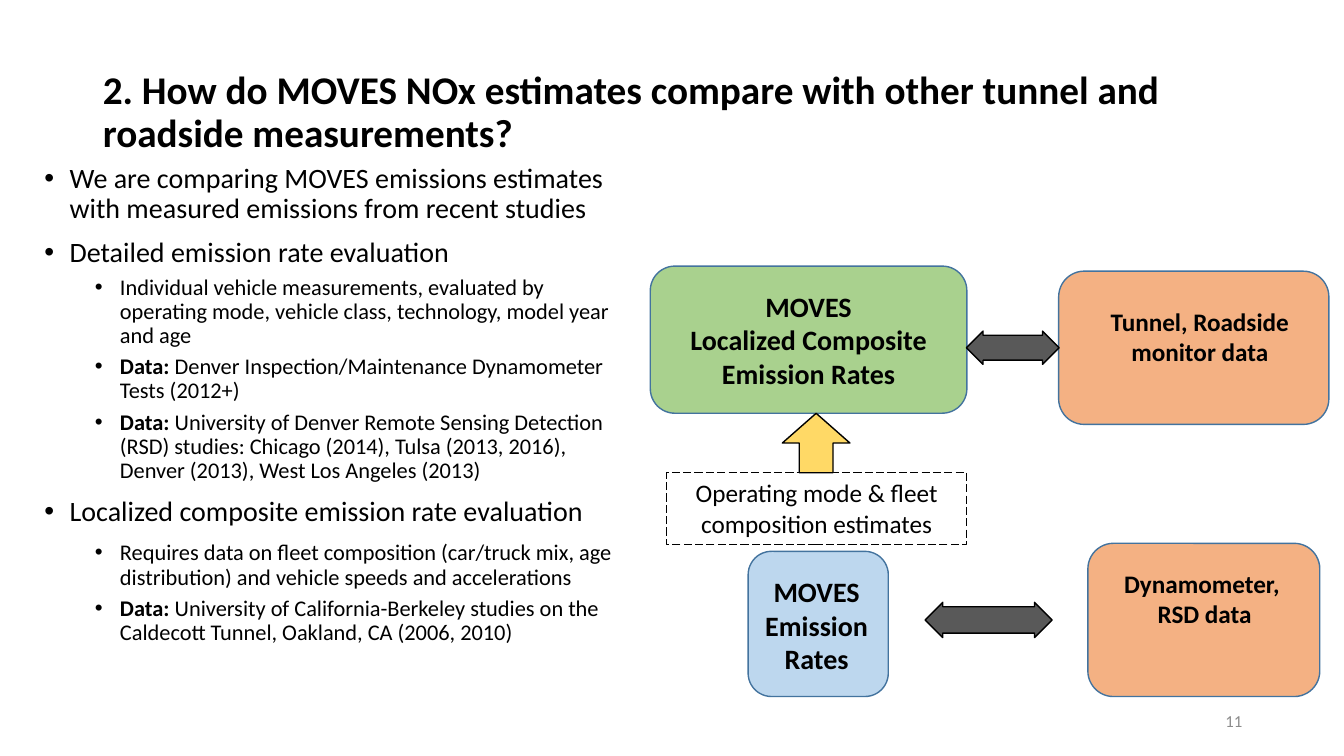
from dataclasses import dataclass

from lxml import etree
from pptx import Presentation
from pptx import util as u
from pptx.dml.color import RGBColor
from pptx.enum import dml, shapes, text
from pptx.oxml import ns

# Content: body paragraphs are (level, space before, [(words, bold), ...])
TITLE = "2. How do MOVES NOx estimates compare with other tunnel and roadside measurements?"
BODY = [
    (0, 10, [("We are comparing MOVES emissions estimates with measured emissions "
              "from recent studies", False)]),
    (0, 10, [("Detailed emission rate evaluation", False)]),
    (1, 5, [("Individual vehicle measurements, evaluated by operating mode, vehicle class, "
             "technology, model year and age", False)]),
    (1, 5, [("Data: ", True),
            ("Denver Inspection/Maintenance Dynamometer Tests (2012+)", False)]),
    (1, 5, [("Data:", True),
            (" University of Denver Remote Sensing Detection (RSD) studies: Chicago (2014), "
             "Tulsa (2013, 2016), Denver (2013), West Los Angeles (2013)", False)]),
    (0, 10, [("Localized composite emission rate evaluation", False)]),
    (2, 10, [("Requires data on fleet composition (car/truck mix, age distribution) and "
              "vehicle speeds and accelerations", False)]),
    (1, 5, [("Data: ", True),
            ("University of California-Berkeley studies on the Caldecott Tunnel, "
             "Oakland, CA (2006, 2010)", False)]),
]


@dataclass(frozen=True)
class Theme:
    font: str = "Calibri"
    ink: str = "000000"
    edge: str = "43739E"
    rates: str = "BDD7EE"
    composite: str = "A9D18E"
    data: str = "F4B183"
    compare: str = "595959"
    feed: str = "FFD966"
    muted: str = "8C8C8C"
    title: int = 28
    lead: int = 20
    label: int = 18
    detail: int = 16
    number: int = 12


T = Theme()
MSO = shapes.MSO_SHAPE
CENTER, RIGHT = text.PP_ALIGN.CENTER, text.PP_ALIGN.RIGHT

# Boxes in px: left, top, width, height
TITLE_BOX = (92, 40, 1150, 145)
BODY_BOX = (34, 158, 601, 546)
NUMBER_BOX = (942, 695, 300, 40)
ESTIMATES_BOX = (661, 469, 298, 71)
CARDS = [  # box, fill
    ((742, 547, 139, 144), T.rates),
    ((1079, 539, 230, 152), T.data),
    ((645, 264, 314, 146), T.composite),
    ((1050, 269, 268, 152), T.data),
]
LABELS = [  # box, lines, size
    ((728, 565, 164, 111), ["MOVES Emission Rates"], T.lead),
    ((1066, 559, 252, 71), ["Dynamometer,", " RSD data"], T.label),
    ((653, 282, 298, 111), ["MOVES", "Localized Composite Emission Rates"], T.lead),
    ((1079, 299, 222, 71), ["Tunnel, Roadside monitor data"], T.label),
]
ARROWS = [  # preset, box before turning, turn, adjustments, fill
    (MSO.UP_DOWN_ARROW, (963, 552, 35, 126), 90, (0.434, 0.75), T.compare),
    (MSO.UP_DOWN_ARROW, (988, 299, 33, 92), 90, (0.434, 0.75), T.compare),
    (MSO.UP_ARROW, (776, 410, 67, 59), 0, (), T.feed),
]

PX = u.Inches(1) // 100


def emu(box):
    return [v * PX for v in box]


def place(sp, box):
    for name, value in zip(("left", "top", "width", "height"), emu(box)):
        setattr(sp, name, value)


def add_run(p, words, size, bold=False, color=T.ink):
    r = p.add_run()
    r.text = words
    for name, value in dict(name=T.font, size=u.Pt(size), bold=bold).items():
        setattr(r.font, name, value)
    r.font.color.rgb = RGBColor.from_string(color)


def frame(sp, anchor=text.MSO_ANCHOR.TOP):
    tf = sp.text_frame
    settings = dict(word_wrap=True, auto_size=text.MSO_AUTO_SIZE.NONE, vertical_anchor=anchor)
    for name, value in settings.items():
        setattr(tf, name, value)
    return tf


def paragraph(tf, index, **settings):
    p = tf.add_paragraph() if index else tf.paragraphs[0]
    for name, value in settings.items():
        setattr(p, name, value)
    return p


def add_bullet(p, indent):
    pPr = p._p.get_or_add_pPr()
    pPr.set("marL", str(indent * PX))
    pPr.set("indent", str(-25 * PX))
    etree.SubElement(pPr, ns.qn("a:buFont"), typeface="Arial")
    etree.SubElement(pPr, ns.qn("a:buChar"), char="•")


def add_lines(sp, lines, size, bold=False):
    tf = frame(sp)
    for i, words in enumerate(lines):
        add_run(paragraph(tf, i, alignment=CENTER), words, size, bold)


def add_shape(s, preset, box, fill=None, line=T.edge, width=1):
    sp = s.shapes.add_shape(preset, *emu(box))
    sp.shadow.inherit = False
    if fill:
        sp.fill.solid()
        sp.fill.fore_color.rgb = RGBColor.from_string(fill)
    else:
        sp.fill.background()
    sp.line.color.rgb = RGBColor.from_string(line)
    sp.line.width = u.Pt(width)
    return sp


def main():
    prs = Presentation()
    prs.slide_width, prs.slide_height = u.Inches(13.33), u.Inches(7.5)
    s = prs.slides.add_slide(prs.slide_layouts[1])

    # Title
    title = s.shapes.title
    place(title, TITLE_BOX)
    tf = frame(title, text.MSO_ANCHOR.MIDDLE)
    p = paragraph(tf, 0, alignment=text.PP_ALIGN.LEFT, line_spacing=0.9)
    add_run(p, TITLE, T.title, True)

    # Bulleted list
    body = s.placeholders[1]
    place(body, BODY_BOX)
    tf = frame(body)
    for i, (level, before, runs) in enumerate(BODY):
        p = paragraph(tf, i, level=level, line_spacing=0.9, space_before=u.Pt(before))
        add_bullet(p, 75 if level else 25)
        for words, bold in runs:
            add_run(p, words, T.detail if level else T.lead, bold)

    # Diagram cards and their labels
    for box, fill in CARDS:
        add_shape(s, MSO.ROUNDED_RECTANGLE, box, fill)
    for box, lines, size in LABELS:
        add_lines(s.shapes.add_textbox(*emu(box)), lines, size, True)

    # Dashed input box
    estimates = add_shape(s, MSO.RECTANGLE, ESTIMATES_BOX, line=T.ink, width=0.75)
    estimates.line.dash_style = dml.MSO_LINE.LONG_DASH
    add_lines(estimates, ["Operating mode & fleet composition estimates"], T.label)

    # Block arrows
    for preset, box, turn, adjustments, fill in ARROWS:
        arrow = add_shape(s, preset, box, fill, T.ink)
        arrow.rotation = turn
        for i, value in enumerate(adjustments):
            arrow.adjustments[i] = value

    # Slide number
    tf = frame(s.shapes.add_textbox(*emu(NUMBER_BOX)), text.MSO_ANCHOR.MIDDLE)
    add_run(paragraph(tf, 0, alignment=RIGHT), "11", T.number, color=T.muted)

    prs.save("out.pptx")


if __name__ == "__main__":
    main()
